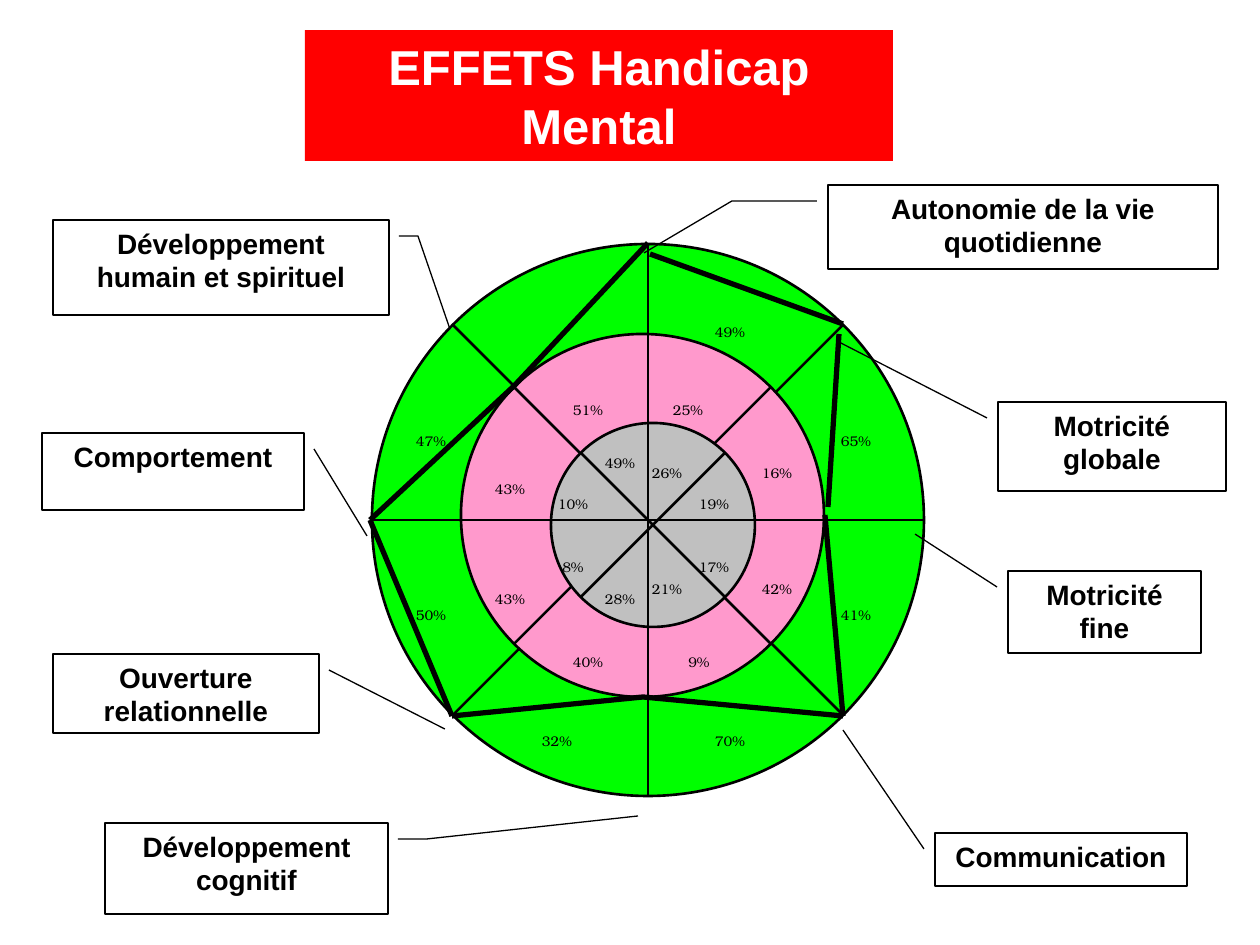
from dataclasses import dataclass
from itertools import pairwise

from lxml import etree
from pptx import Presentation
from pptx import util as u
from pptx.dml.color import RGBColor
from pptx.enum import shapes, text
from pptx.oxml.ns import qn

PX = u.Inches(1) / 126


@dataclass(frozen=True)
class Theme:
    ink: str = "000000"
    paper: str = "FFFFFF"
    title_fill: str = "FF0000"
    font: str = "Arial"
    value_font: str = "TeX Gyre Bonum"
    title_size: int = 28
    label_size: int = 16
    value_size: int = 8
    thin: float = 0.75
    medium: float = 1.5
    thick: float = 3


THEME = Theme()

TITLE = ("EFFETS Handicap Mental", (305, 30, 588, 131))

# left, top, diameter, fill
RINGS = [
    (372, 244, 552, "00FF00"),
    (461, 334, 363, "FF99CC"),
    (551, 423, 204, "C0C0C0"),
]
AXES = [[(648, 243), (648, 796)], [(370, 520), (925, 520)]]

# label, box, leader points from the box outwards
CALLOUTS = [
    ("Motricité globale", (998, 402, 228, 89), [(987, 418), (837, 341)]),
    ("Autonomie de la vie quotidienne", (828, 185, 390, 84),
     [(817, 201), (732, 201), (644, 253)]),
    ("Motricité fine", (1008, 571, 193, 82), [(997, 587), (915, 534)]),
    ("Développement cognitif", (105, 823, 283, 91),
     [(398, 839), (427, 839), (638, 816)]),
    ("Ouverture relationnelle", (53, 654, 266, 79), [(329, 670), (445, 729)]),
    ("Comportement", (42, 433, 262, 77), [(314, 449), (367, 536)]),
    ("Développement humain et spirituel", (53, 220, 336, 95),
     [(399, 236), (418, 236), (450, 329)]),
    ("Communication", (935, 833, 252, 53), [(924, 849), (843, 730)]),
]

# one row per sector, clockwise from the top: inner, middle, outer ring
VALUE_SIZE = (32, 15)
VALUES = [
    [(26, 651, 465), (25, 672, 402), (49, 714, 324)],
    [(19, 698, 496), (16, 761, 465), (65, 840, 433)],
    [(17, 698, 559), (42, 761, 581), (41, 840, 607)],
    [(21, 651, 581), (9, 683, 654), (70, 714, 733)],
    [(28, 604, 591), (40, 572, 654), (32, 541, 733)],
    [(8, 557, 559), (43, 494, 591), (50, 415, 607)],
    [(10, 557, 496), (43, 494, 481), (47, 415, 433)],
    [(49, 604, 455), (51, 572, 402)],
]

PROFILE = [
    [(650, 254), (843, 324)],
    [(839, 334), (828, 507)],
    [(825, 515), (843, 716), (643, 697), (452, 716),
     (370, 520), (514, 386), (648, 243)],
]


def emu(*lengths):
    return [round(n * PX) for n in lengths]


def rgb(color):
    return RGBColor.from_string(color)


def write(sp, content, size, color, font=THEME.font, bold=True):
    tf = sp.text_frame
    tf.text = content
    p = tf.paragraphs[0]
    p.alignment = text.PP_ALIGN.CENTER
    r = p.runs[0]
    r.font.name, r.font.size, r.font.bold = font, u.Pt(size), bold
    r.font.color.rgb = rgb(color)
    return r


def add_outlined(s, kind, box, fill, width):
    sp = s.shapes.add_shape(kind, *emu(*box))
    sp.shadow.inherit = False
    sp.fill.solid()
    sp.fill.fore_color.rgb = rgb(fill)
    sp.line.color.rgb = rgb(THEME.ink)
    sp.line.width = u.Pt(width)
    return sp


def add_path(s, points, width):
    for start, end in pairwise(points):
        line = s.shapes.add_connector(
            shapes.MSO_CONNECTOR.STRAIGHT, *emu(*start, *end))
        line.line.color.rgb = rgb(THEME.ink)
        line.line.width = u.Pt(width)
        etree.SubElement(line._element.spPr, qn("a:effectLst"))


def add_callout(s, label, box, leader):
    kind = (shapes.MSO_SHAPE.LINE_CALLOUT_1 if len(leader) == 2
            else shapes.MSO_SHAPE.LINE_CALLOUT_2)
    sp = add_outlined(s, kind, box, THEME.paper, THEME.thin)
    left, top, width, height = box
    for i, (x, y) in enumerate(leader):
        sp.adjustments[2 * i] = (y - top) / height
        sp.adjustments[2 * i + 1] = (x - left) / width
    sp.text_frame.vertical_anchor = text.MSO_ANCHOR.TOP
    write(sp, label, THEME.label_size, THEME.ink)


def add_value(s, value, x, y):
    sp = s.shapes.add_textbox(*emu(x, y, *VALUE_SIZE))
    tf = sp.text_frame
    tf.word_wrap = False
    tf.margin_left = tf.margin_right = tf.margin_top = tf.margin_bottom = 0
    r = write(sp, f"{value}%", THEME.value_size, THEME.ink,
              THEME.value_font, bold=False)
    ln = etree.Element(qn("a:ln"), w=str(u.Pt(THEME.thin)))
    fill = etree.SubElement(ln, qn("a:solidFill"))
    etree.SubElement(fill, qn("a:srgbClr"), val=THEME.ink)
    r._r.get_or_add_rPr().insert(0, ln)


def add_title(s):
    content, box = TITLE
    sp = s.shapes.title
    sp.left, sp.top, sp.width, sp.height = emu(*box)
    sp.fill.solid()
    sp.fill.fore_color.rgb = rgb(THEME.title_fill)
    tf = sp.text_frame
    tf.word_wrap = True
    tf.auto_size = text.MSO_AUTO_SIZE.NONE
    tf.vertical_anchor = text.MSO_ANCHOR.MIDDLE
    write(sp, content, THEME.title_size, THEME.paper)


def main():
    prs = Presentation()
    prs.slide_width, prs.slide_height = emu(1260, 945)
    s = prs.slides.add_slide(prs.slide_layouts[5])
    add_title(s)
    for left, top, size, fill in RINGS:
        add_outlined(s, shapes.MSO_SHAPE.FLOWCHART_SUMMING_JUNCTION,
                     (left, top, size, size), fill, THEME.medium)
    for axis in AXES:
        add_path(s, axis, THEME.medium)
    for callout in CALLOUTS:
        add_callout(s, *callout)
    for sector in VALUES:
        for value in sector:
            add_value(s, *value)
    for points in PROFILE:
        add_path(s, points, THEME.thick)
    prs.save("out.pptx")


if __name__ == "__main__":
    main()
